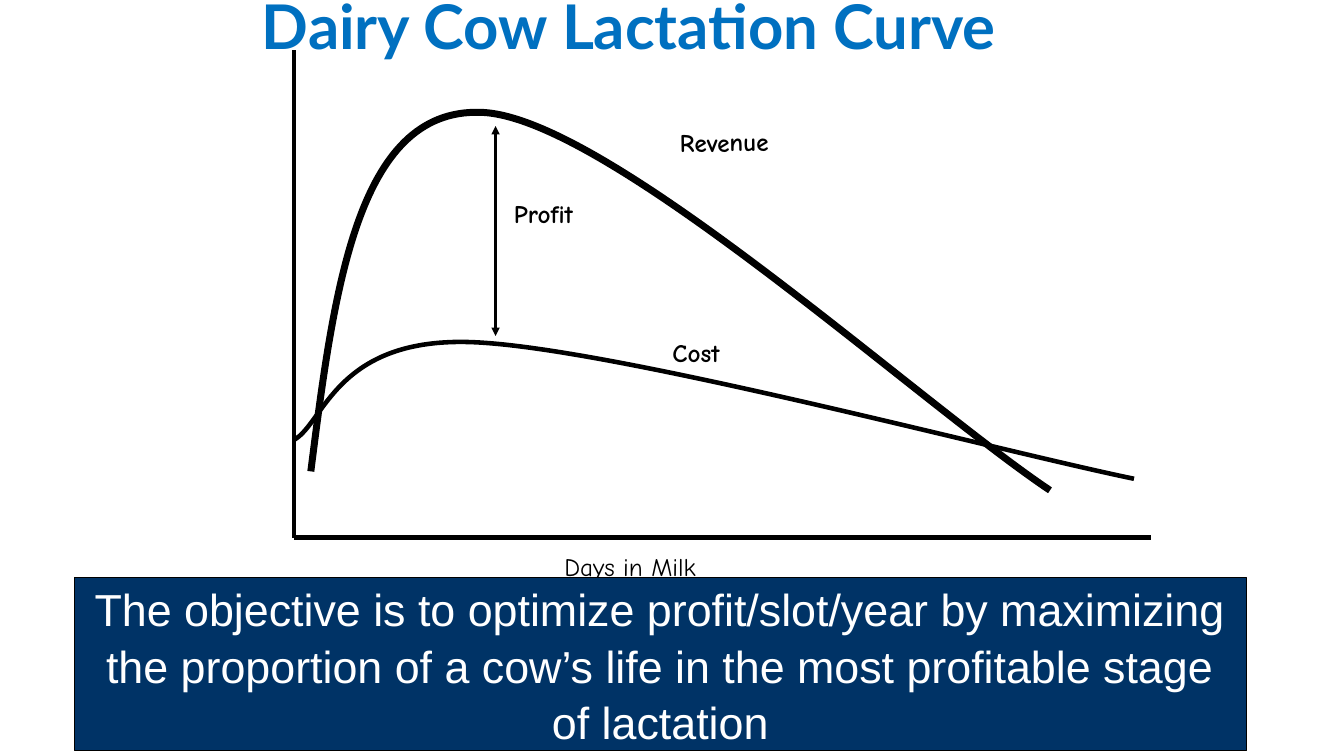
from lxml.etree import SubElement
from pptx import Presentation
from pptx.dml.color import RGBColor
from pptx.enum.shapes import MSO_CONNECTOR, MSO_SHAPE
from pptx.enum.text import MSO_ANCHOR, PP_ALIGN
from pptx.oxml.ns import qn
from pptx.util import Pt

PX = 9525
COLORS = {"ink": "000000", "title": "0070C0", "banner": "003366", "paper": "FFFFFF"}

TITLE_BOX = (240, -32, 816, 120)
CHART_BOX = (280, 48, 816, 464)
MESSAGE_BOX = (71, 550, 1116, 165)

TITLE_FONT = {"name": "Lato", "size": Pt(44), "bold": True}
LABEL_FONT = {"name": "Comic Neue", "size": Pt(18), "bold": True}
AXIS_FONT = {"name": "Comic Neue", "size": Pt(18), "bold": False}
MESSAGE_FONT = {"name": "Arial", "size": Pt(32), "bold": False}

REVENUE_CURVE = [(16, 401), (38, 228), (60, 56), (177, 59), (295, 61), (593, 334), (720, 419)]
COST_CURVE = [(0, 371), (29, 355), (40, 272), (172, 278), (306, 284), (669, 381), (800, 408)]
LABELS = [
    ("Days in Milk", (248, 472, 156, 38), AXIS_FONT, 0),
    ("Cost", (351, 269, 70, 38), LABEL_FONT, 0),
    ("Revenue", (358, 68, 112, 38), LABEL_FONT, 359.2),
    ("Profit", (200, 136, 87, 38), LABEL_FONT, 0),
]


def emu(*lengths):
    return [length * PX for length in lengths]


def color(name):
    return RGBColor.from_string(COLORS[name])


def write_text(shape, text, font_values, color_name, wrap=True):
    frame = shape.text_frame
    frame.word_wrap = wrap
    paragraph = frame.paragraphs[0]
    paragraph.text = text
    for name, value in font_values.items():
        setattr(paragraph.font, name, value)
    paragraph.font.color.rgb = color(color_name)
    return paragraph


def style_line(shape, width):
    shape.line.color.rgb = color("ink")
    shape.line.width = Pt(width)


def add_line(slide, start, end, width):
    connector = slide.shapes.add_connector(MSO_CONNECTOR.STRAIGHT, *emu(*start, *end))
    style_line(connector, width)
    SubElement(connector._element.spPr, qn("a:effectLst"))
    return connector


def add_curve(slide, origin, points, width):
    builder = slide.shapes.build_freeform(*points[0], scale=PX)
    builder.add_line_segments(points[1:], close=False)
    shape = builder.convert_to_shape(*emu(*origin))
    shape.shadow.inherit = False
    shape.fill.background()
    style_line(shape, width)
    outline = next(shape._element.iter(qn("a:path")))
    segments = outline.findall(qn("a:lnTo"))
    for first in range(0, len(segments), 3):
        bezier = SubElement(outline, qn("a:cubicBezTo"))
        for segment in segments[first:first + 3]:
            bezier.append(segment[0])
            outline.remove(segment)


def add_title(slide, box):
    shape = slide.shapes.add_textbox(*emu(*box))
    shape.text_frame.vertical_anchor = MSO_ANCHOR.MIDDLE
    paragraph = write_text(shape, "Dairy Cow Lactation Curve", TITLE_FONT, "title")
    paragraph.line_spacing = 0.9


def add_lactation_chart(slide, box):
    left, top, width, height = box
    bottom = top + height
    add_curve(slide, (left, top), REVENUE_CURVE, 5)
    add_line(slide, (left, top), (left, bottom), 3)
    add_line(slide, (left, bottom), (left + width, bottom), 3)
    add_curve(slide, (left, top), COST_CURVE, 3.25)

    profit_arrow = add_line(slide, (left + 192, top + 272), (left + 192, top + 72), 2)
    for end in ("a:headEnd", "a:tailEnd"):
        SubElement(profit_arrow.line._get_or_add_ln(), qn(end), type="triangle")

    for text, (x, y, label_width, label_height), font_values, rotation in LABELS:
        label = slide.shapes.add_textbox(*emu(left + x, top + y, label_width, label_height))
        label.rotation = rotation
        write_text(label, text, font_values, "ink", wrap=False)


def add_message(slide, box):
    banner = slide.shapes.add_shape(MSO_SHAPE.RECTANGLE, *emu(*box))
    banner.shadow.inherit = False
    banner.fill.solid()
    banner.fill.fore_color.rgb = color("banner")
    style_line(banner, 0.75)
    banner.text_frame.vertical_anchor = MSO_ANCHOR.MIDDLE
    paragraph = write_text(
        banner,
        "The objective is to optimize profit/slot/year by maximizing the proportion "
        "of a cow’s life in the most profitable stage of lactation",
        MESSAGE_FONT,
        "paper",
    )
    paragraph.alignment = PP_ALIGN.CENTER
    paragraph.line_spacing = 1.05


def main():
    presentation = Presentation()
    presentation.slide_width, presentation.slide_height = emu(1280, 720)
    slide = presentation.slides.add_slide(presentation.slide_layouts[6])
    add_title(slide, TITLE_BOX)
    add_lactation_chart(slide, CHART_BOX)
    add_message(slide, MESSAGE_BOX)
    presentation.save("out.pptx")


if __name__ == "__main__":
    main()
